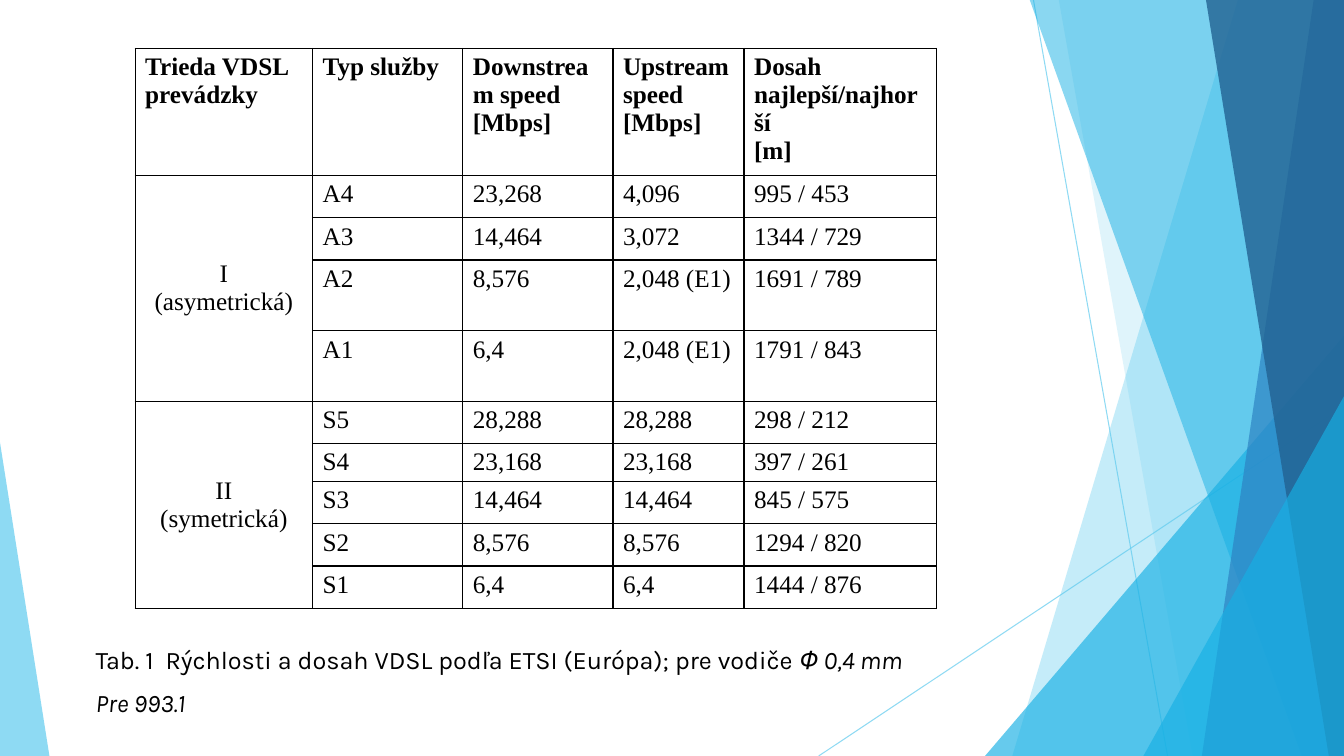
from lxml import etree
from pptx import Presentation, util as u
from pptx.dml.color import RGBColor
from pptx.enum import shapes, text
from pptx.oxml import ns

BLACK = RGBColor(0x00, 0x00, 0x00)
SKY = RGBColor(0x5F, 0xCB, 0xEF)
CYAN = RGBColor(0x17, 0xB0, 0xE4)
BLUE = RGBColor(0x2E, 0x83, 0xC3)
NAVY = RGBColor(0x22, 0x62, 0x92)

WIDTH, HEIGHT, TOP = 13.33, 7.5, -0.01
RAYS = [((10.25, 0), (11.58, HEIGHT)), ((WIDTH, 4.03), (8.12, HEIGHT))]
BANDS_BACK = [(12.28, 10.04, SKY, 36), (10.5, 11.83, SKY, 20)]
BANDS_FRONT = [(10.21, 12.91, CYAN, 50), (13.03, 11.92, BLUE, 70), (11.96, 13.18, NAVY, 80)]

COLS = [1.76, 1.49, 1.49, 1.3, 1.91]
ROWS = [1.26, 0.42, 0.42, 0.7, 0.7, 0.42, 0.34, 0.42, 0.42, 0.42]
HEADER = ["Trieda VDSL prevádzky", "Typ služby", "Downstream speed\n[Mbps]",
          "Upstream speed\n[Mbps]", "Dosah najlepší/najhorší\n[m]"]
CLASSES = [
    ("I\n(asymetrická)", [
        ("A4", "23,268", "4,096", "995 / 453"),
        ("A3", "14,464", "3,072", "1344 / 729"),
        ("A2", "8,576", "2,048 (E1)", "1691 / 789"),
        ("A1", "6,4", "2,048 (E1)", "1791 / 843"),
    ]),
    ("II\n(symetrická)", [
        ("S5", "28,288", "28,288", "298 / 212"),
        ("S4", "23,168", "23,168", "397 / 261"),
        ("S3", "14,464", "14,464", "845 / 575"),
        ("S2", "8,576", "8,576", "1294 / 820"),
        ("S1", "6,4", "6,4", "1444 / 876"),
    ]),
]
CAPTION = [
    [("Tab. 1  Rýchlosti a dosah VDSL podľa ETSI (Európa); pre vodiče ", False),
     ("Φ 0,4 mm", True)],
    [("Pre 993.1", True)],
]


class Deck:
    """Holds the text style and the current slide and draws elements on it."""

    table_font = {"name": "Times New Roman", "size": u.Pt(18)}
    caption_font = {"name": "Karla", "size": u.Pt(18)}

    def __init__(self, prs):
        self.s = prs.slides.add_slide(prs.slide_layouts[6])

    def font(self, r, **formats):
        for name, value in formats.items():
            setattr(r.font, name, value)
        r.font.color.rgb = BLACK

    def alpha(self, sp, percent):
        for color in sp._element.spPr.iter(ns.qn("a:srgbClr")):
            etree.SubElement(color, ns.qn("a:alpha"), val=str(percent * 1000))

    def paint(self, sp, color, percent):
        sp.shadow.inherit = False
        sp.fill.solid()
        sp.fill.fore_color.rgb = color
        sp.line.fill.background()
        self.alpha(sp, percent)

    def ray(self, start, end):
        ends = [u.Inches(v) for v in (*start, *end)]
        sp = self.s.shapes.add_connector(shapes.MSO_CONNECTOR.STRAIGHT, *ends)
        sp.line.color.rgb = SKY
        sp.line.width = u.Pt(0.75)
        self.alpha(sp, 70)
        etree.SubElement(sp._element.spPr, ns.qn("a:effectLst"))

    def band(self, top_x, bottom_x, color, percent):
        corners = [(top_x, TOP), (WIDTH, TOP), (WIDTH, HEIGHT), (bottom_x, HEIGHT)]
        points = [(u.Inches(x), u.Inches(y)) for x, y in corners]
        outline = self.s.shapes.build_freeform(*points[0])
        outline.add_line_segments(points[1:], close=True)
        self.paint(outline.convert_to_shape(), color, percent)

    def triangle(self, box, apex, color, percent):
        sp = self.s.shapes.add_shape(shapes.MSO_SHAPE.ISOSCELES_TRIANGLE,
                                     *[u.Inches(v) for v in box])
        sp.adjustments[0] = apex
        self.paint(sp, color, percent)

    def cell(self, cell, content="", bold=False, align=None, anchor=None):
        tc_pr = cell._tc.get_or_add_tcPr()
        for side in ("a:lnL", "a:lnR", "a:lnT", "a:lnB"):
            ln = etree.SubElement(tc_pr, ns.qn(side), w=str(u.Pt(1)))
            fill = etree.SubElement(ln, ns.qn("a:solidFill"))
            etree.SubElement(fill, ns.qn("a:srgbClr"), val=str(BLACK))
        cell.fill.background()
        cell.vertical_anchor = anchor
        if content:
            cell.text = content
        for p in cell.text_frame.paragraphs:
            p.alignment = align
            for r in p.runs:
                self.font(r, bold=bold, **self.table_font)

    def table(self, left, top):
        box = [u.Inches(v) for v in (left, top, sum(COLS), sum(ROWS))]
        table = self.s.shapes.add_table(len(ROWS), len(COLS), *box).table
        table.first_row = table.horz_banding = False
        for tracks, sizes, name in ((table.columns, COLS, "width"), (table.rows, ROWS, "height")):
            for track, size in zip(tracks, sizes):
                setattr(track, name, u.Inches(size))
        for col, title in enumerate(HEADER):
            self.cell(table.cell(0, col), title, bold=True)
        row = 1
        for label, services in CLASSES:
            first = row
            for service in services:
                title = label if row == first else ""
                self.cell(table.cell(row, 0), title, align=text.PP_ALIGN.CENTER,
                          anchor=text.MSO_ANCHOR.MIDDLE)
                for col, value in enumerate(service, 1):
                    self.cell(table.cell(row, col), value)
                row += 1
            table.cell(first, 0).merge(table.cell(row - 1, 0))

    def caption(self, box, lines):
        tf = self.s.shapes.add_textbox(*[u.Inches(v) for v in box]).text_frame
        tf.word_wrap = True
        tf.auto_size = text.MSO_AUTO_SIZE.SHAPE_TO_FIT_TEXT
        for i, line in enumerate(lines):
            p = tf.add_paragraph() if i else tf.paragraphs[0]
            p.space_before = u.Pt(9)
            for content, italic in line:
                r = p.add_run()
                r.text = content
                self.font(r, italic=italic, **self.caption_font)


def main():
    prs = Presentation()
    prs.slide_width, prs.slide_height = u.Inches(WIDTH), u.Inches(HEIGHT)
    deck = Deck(prs)
    for ray in RAYS:
        deck.ray(*ray)
    for band in BANDS_BACK:
        deck.band(*band)
    deck.triangle((9.77, 3.33, 3.56, 4.17), 1, CYAN, 66)
    for band in BANDS_FRONT:
        deck.band(*band)
    deck.triangle((11.34, 3.93, 1.99, 3.57), 1, CYAN, 66)
    deck.triangle((0, 4.39, 0.49, 3.11), 0, SKY, 70)
    deck.table(1.34, 0.48)
    deck.caption((0.85, 6.34, 8.78, 0.86), CAPTION)
    prs.save("out.pptx")


if __name__ == "__main__":
    main()
